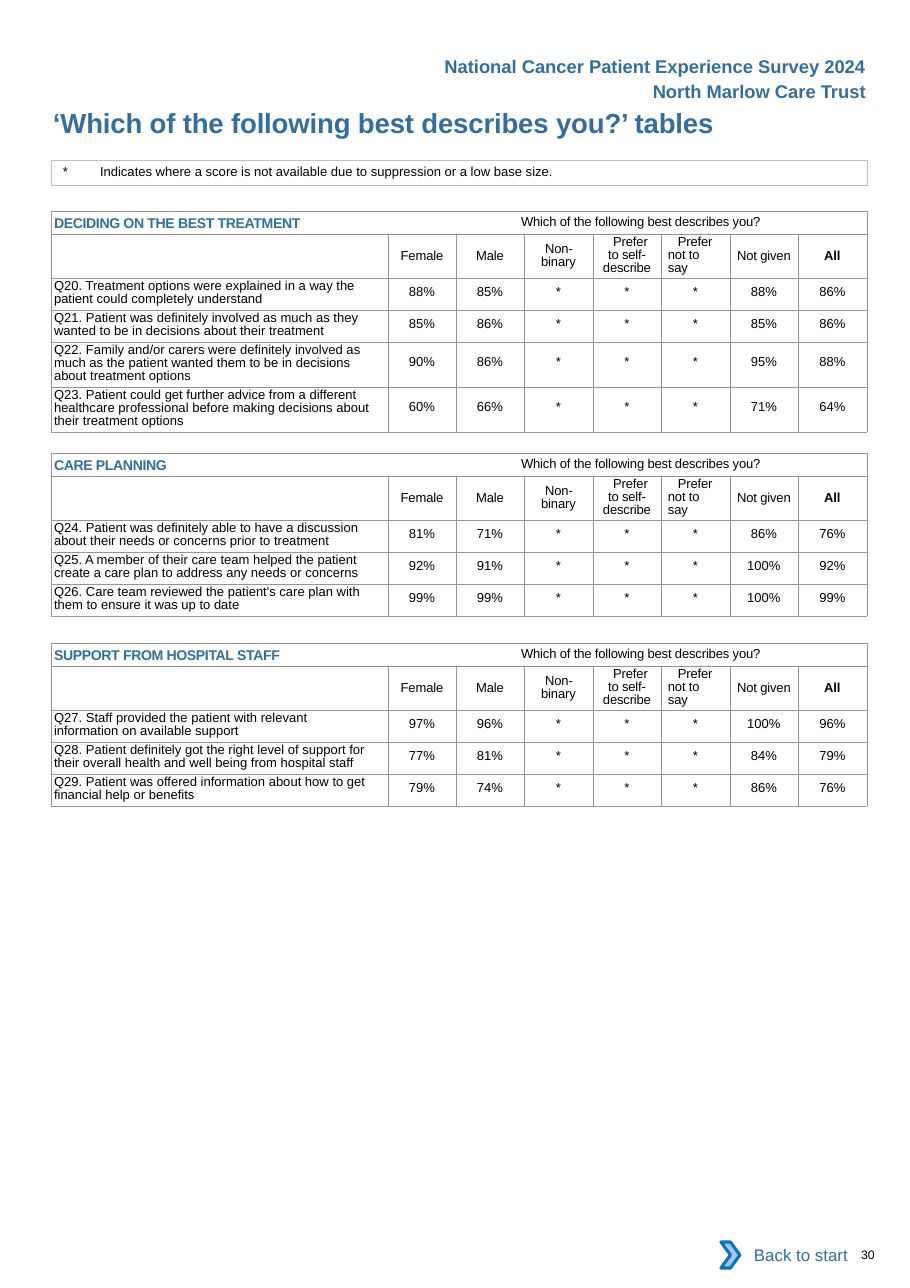
from lxml.etree import SubElement
from pptx import Presentation
from pptx.dml.color import RGBColor
from pptx.enum.shapes import MSO_SHAPE
from pptx.enum.text import MSO_ANCHOR, PP_ALIGN
from pptx.oxml.ns import qn
from pptx.util import Pt

SCALE = 914400 / 110.2
BLUE, BLACK, GREY = "336E9F", "000000", "939598"
BODY = {"size": 8.5}
LABEL = {"size": 8.5, "spc": -10}
HEADING = {"size": 12, "bold": True, "color": BLUE}
TITLE = {"size": 18, "bold": True, "color": BLUE, "spc": -10}
SECTION = {"size": 15.8, "bold": True, "color": BLUE, "baseline": -8000, "spc": -20}
QUESTION = "Which of the following best describes you?"
GROUPS = [
    ("Female", {}),
    ("Male", {}),
    ("Non- binary", {"left": 16, "right": 16, "first": 1, "spacing": 8.6}),
    ("Prefer to self- describe", {"left": 9, "right": 9, "first": 7, "spacing": 8.6}),
    ("Prefer not to say", {"left": 7, "right": 16, "first": 10, "spacing": 8.6, "align": PP_ALIGN.LEFT}),
    ("Not given", {}),
    ("All", {}),
]
SECTIONS = [
    (211, "DECIDING ON THE BEST TREATMENT", [
        ("Q20. Treatment options were explained in a way the patient could completely understand",
         "88% 85% * * * 88% 86%", 2),
        ("Q21. Patient was definitely involved as much as they wanted to be in decisions about their treatment",
         "85% 86% * * * 85% 86%", 2),
        ("Q22. Family and/or carers were definitely involved as much as the patient wanted them to be in "
         "decisions about treatment options", "90% 86% * * * 95% 88%", 3),
        ("Q23. Patient could get further advice from a different healthcare professional before making "
         "decisions about their treatment options", "60% 66% * * * 71% 64%", 3),
    ]),
    (453, "CARE PLANNING", [
        ("Q24. Patient was definitely able to have a discussion about their needs or concerns prior to treatment",
         "81% 71% * * * 86% 76%", 2),
        ("Q25. A member of their care team helped the patient create a care plan to address any needs or concerns",
         "92% 91% * * * 100% 92%", 2),
        ("Q26. Care team reviewed the patient's care plan with them to ensure it was up to date",
         "99% 99% * * * 100% 99%", 2),
    ]),
    (643, "SUPPORT FROM HOSPITAL STAFF", [
        ("Q27. Staff provided the patient with relevant information on available support",
         "97% 96% * * * 100% 96%", 2),
        ("Q28. Patient definitely got the right level of support for their overall health and well being "
         "from hospital staff", "77% 81% * * * 84% 79%", 2),
        ("Q29. Patient was offered information about how to get financial help or benefits",
         "79% 74% * * * 86% 76%", 2),
    ]),
]


def px(length):
    """Turn pixels into EMU."""
    return round(length * SCALE)


def rgb(color):
    """Turn a hex string into a colour."""
    return RGBColor.from_string(color)


def set_insets(holder, left=0, top=0, right=0, bottom=0):
    """Set the inner margins of a cell or text frame."""
    insets = {"left": left, "top": top, "right": right, "bottom": bottom}
    for side, length in insets.items():
        setattr(holder, f"margin_{side}", px(length))


def write(frame, runs, align=PP_ALIGN.LEFT, left=0, right=0, first=0, spacing=None, tab=None):
    """Write runs of (text, font values) into the first paragraph."""
    paragraph = frame.paragraphs[0]
    paragraph.alignment = align
    if spacing:
        paragraph.line_spacing = Pt(spacing)
    properties = paragraph._p.get_or_add_pPr()
    for name, length in {"marL": left, "marR": right, "indent": first}.items():
        if length:
            properties.set(name, str(px(length)))
    if tab:
        tabs = SubElement(properties, qn("a:tabLst"))
        SubElement(tabs, qn("a:tab"), pos=str(px(tab)), algn="l")
    for text, values in runs:
        run = paragraph.add_run()
        run.text = text
        font = run.font
        font.color.rgb = rgb(values.get("color", BLACK))
        settings = {"name": "Arial", "size": Pt(values["size"]), "bold": values.get("bold", False)}
        for name, value in settings.items():
            setattr(font, name, value)
        for name in ("baseline", "spc"):
            if name in values:
                run._r.get_or_add_rPr().set(name, str(values[name]))


def add_text(slide, box, text, values, **layout):
    """Add a text box without insets."""
    frame = slide.shapes.add_textbox(*map(px, box)).text_frame
    frame.word_wrap = True
    set_insets(frame)
    write(frame, [(text, values)], **layout)


def add_box(slide, preset, box, fill=None, line=None, width=0.5):
    """Add a flat preset shape."""
    shape = slide.shapes.add_shape(preset, *map(px, box))
    shape.shadow.inherit = False
    if fill:
        shape.fill.solid()
        shape.fill.fore_color.rgb = rgb(fill)
    else:
        shape.fill.background()
    if line:
        shape.line.color.rgb = rgb(line)
        shape.line.width = Pt(width)
    else:
        shape.line.fill.background()
    return shape


def format_cell(cell):
    """Clear the fill and insets of a cell and rule its four edges."""
    set_insets(cell)
    properties = cell._tc.get_or_add_tcPr()
    for edge in ("lnL", "lnR", "lnT", "lnB"):
        line = SubElement(properties, qn(f"a:{edge}"), w=str(Pt(0.5)))
        fill = SubElement(line, qn("a:solidFill"))
        SubElement(fill, qn("a:srgbClr"), val=GREY)
    cell.fill.background()
    cell.vertical_anchor = MSO_ANCHOR.MIDDLE


def add_section(slide, left, top, width, title, rows):
    """Add one table of scores by group."""
    question_width = 337
    group_count = len(GROUPS)
    heights = [23, 44] + [32 if lines == 2 else 45 for _, _, lines in rows]
    box = (left, top, width, sum(heights))
    table = slide.shapes.add_table(len(heights), group_count + 1, *map(px, box)).table
    table.first_row = table.horz_banding = False
    edges = [i * (width - question_width) // group_count for i in range(group_count + 1)]
    widths = [question_width] + [end - start for start, end in zip(edges, edges[1:])]
    for column, length in zip(table.columns, widths):
        column.width = px(length)
    for row, length in zip(table.rows, heights):
        row.height = px(length)
    for cell in table.iter_cells():
        format_cell(cell)

    banner = table.cell(0, 0)
    banner.merge(table.cell(0, group_count))
    write(banner.text_frame, [(f"{title}\t", SECTION), (QUESTION, LABEL)], left=3, spacing=11.8, tab=467)
    for column, (group, layout) in enumerate(GROUPS, 1):
        values = {**LABEL, "bold": group == "All"}
        write(table.cell(1, column).text_frame, [(group, values)], **{"align": PP_ALIGN.CENTER, **layout})
    for index, (question, scores, lines) in enumerate(rows, 2):
        for column, text in enumerate([question] + scores.split()):
            cell = table.cell(index, column)
            cell.vertical_anchor = MSO_ANCHOR.TOP
            if column:
                set_insets(cell, top=7 if lines == 2 else 13)
                write(cell.text_frame, [(text, BODY)], align=PP_ALIGN.CENTER)
            else:
                set_insets(cell, top=2)
                write(cell.text_frame, [(text, BODY)], left=3, right=17, spacing=8.6)


def add_header(slide, left, top, width):
    """Add the survey name, trust name and page title."""
    names = ["National Cancer Patient Experience Survey 2024", "North Marlow Care Trust"]
    for index, name in enumerate(names):
        add_text(slide, (left, top + 25 * index, width - 1, 22), name, HEADING, align=PP_ALIGN.RIGHT)
    title = "‘Which of the following best describes you?’ tables"
    add_text(slide, (left, top + 51, width, 33), title, TITLE, left=2)


def add_note(slide, left, top, width):
    """Add the ruled note on suppressed scores."""
    frame = add_box(slide, MSO_SHAPE.RECTANGLE, (left, top, width, 25), line="BFBFBF").text_frame
    frame.word_wrap = True
    frame.vertical_anchor = MSO_ANCHOR.TOP
    set_insets(frame, top=4, bottom=4)
    text = "*\tIndicates where a score is not available due to suppression or a low base size."
    write(frame, [(text, BODY)], left=12, tab=37)


def add_footer(slide, left, top):
    """Add the way back to the start and the page number."""
    frame = add_box(slide, MSO_SHAPE.RECTANGLE, (left + 8, top, 130, 46), fill="FFFFFF").text_frame
    frame.vertical_anchor = MSO_ANCHOR.MIDDLE
    set_insets(frame, right=11)
    write(frame, [("Back to start", {"size": 11, "color": BLUE})], align=PP_ALIGN.RIGHT)
    add_box(slide, MSO_SHAPE.CHEVRON, (left, top + 10, 19, 26), "A8C7E9", "0A74BB", 2)
    add_text(slide, (left + 129, top + 15, 56, 14), "30", {"size": 8}, left=11)


def main():
    """Build the page of survey tables."""
    presentation = Presentation()
    presentation.slide_width, presentation.slide_height = px(910), px(1288)
    slide = presentation.slides.add_slide(presentation.slide_layouts[6])
    left, width = 51, 816
    add_header(slide, left, 55, width)
    add_note(slide, left, 160, width)
    for top, title, rows in SECTIONS:
        add_section(slide, left, top, width, title, rows)
    add_footer(slide, 721, 1232)
    presentation.save("out.pptx")


if __name__ == "__main__":
    main()
